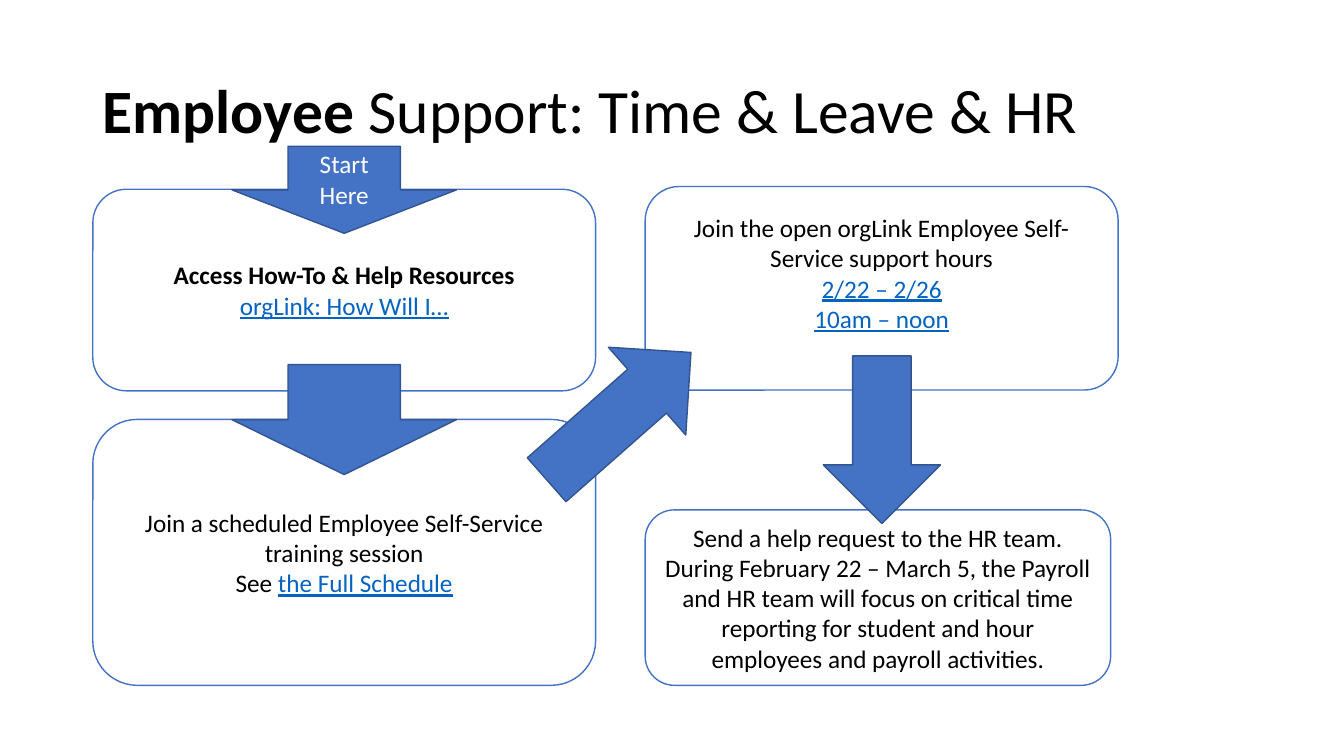
from pptx import Presentation
from pptx import util as u
from pptx.dml.color import RGBColor
from pptx.enum import shapes, text

COLORS = {"ink": "000000", "paper": "FFFFFF", "blue": "4472C4",
          "edge": "325491", "link": "0563C1"}
FONT = "Calibri"

# Each paragraph is a list of (words, style) runs.
TITLE = [[("Employee", "bold"), (" Support: Time & Leave & HR", "")]]
RESOURCES = [[("Access How-To & Help Resources", "bold")],
             [("orgLink: How Will I…", "link")]]
SUPPORT_HOURS = [[("Join the open orgLink Employee Self-Service support hours", "")],
                 [("2/22 – 2/26", "link")],
                 [("10am – noon", "link")]]
TRAINING = [[("Join a scheduled Employee Self-Service training session", "")],
            [("See ", ""), ("the Full Schedule", "link")]]
HELP_REQUEST = [[("Send a help request to the HR team.", "")],
                [("During February 22 – March 5, the Payroll and HR team will focus on "
                  "critical time reporting for student and hour employees and payroll "
                  "activities.", "")]]
START = [[("Start Here", "")]]

# Lengths in cm
LEFT, RIGHT = 2.34, 16.26
LEFT_WIDTH = 12.67
BOTTOM = 17.27
ARROW_WIDTH, NARROW_ARROW = 5.66, 2.95
LEFT_ARROW = LEFT + (LEFT_WIDTH - ARROW_WIDTH) / 2
TRAINING_TOP, HELP_TOP = 10.57, 12.85

# paragraphs, left, top, width, height, bottom inset
STEPS = [
    (RESOURCES, LEFT, 4.77, LEFT_WIDTH, 5.08, 0.13),
    (SUPPORT_HOURS, RIGHT, 4.7, 11.92, 5.13, 0.9),
    (TRAINING, LEFT, TRAINING_TOP, LEFT_WIDTH, BOTTOM - TRAINING_TOP, 0.13),
    (HELP_REQUEST, RIGHT, HELP_TOP, 11.73, BOTTOM - HELP_TOP, 0.13),
]
# paragraphs, left, top, width, height, rotation
ARROWS = [
    (START, LEFT_ARROW, 3.69, ARROW_WIDTH, 2.19, 0),
    ([], LEFT_ARROW, 9.19, ARROW_WIDTH, 2.77, 0),
    ([], 14.12, 8.06, NARROW_ARROW, 4.85, 228.6),
    ([], 20.75, 8.97, NARROW_ARROW, 4.22, 0),
]


def rgb(name):
    return RGBColor.from_string(COLORS[name])


def write(shape, paragraphs, *, size=18, color="ink",
          align=text.PP_ALIGN.CENTER, spacing=None, bottom=0.13):
    frame = shape.text_frame
    frame.word_wrap = True
    frame.vertical_anchor = text.MSO_ANCHOR.MIDDLE
    frame.margin_bottom = u.Cm(bottom)
    for index, runs in enumerate(paragraphs):
        paragraph = frame.add_paragraph() if index else frame.paragraphs[0]
        paragraph.alignment = align
        paragraph.line_spacing = spacing
        for words, style in runs:
            run = paragraph.add_run()
            run.text = words
            font = run.font
            font.name, font.size = FONT, u.Pt(size)
            font.bold = style == "bold"
            font.underline = style == "link"
            font.color.rgb = rgb("link" if style == "link" else color)


def add_block(slide, kind, box, fill, line):
    block = slide.shapes.add_shape(kind, *map(u.Cm, box))
    block.shadow.inherit = False
    block.fill.solid()
    block.fill.fore_color.rgb = rgb(fill)
    block.line.color.rgb = rgb(line)
    block.line.width = u.Pt(1)
    return block


def main():
    deck = Presentation()
    deck.slide_width, deck.slide_height = u.Cm(33.87), u.Cm(19.05)
    slide = deck.slides.add_slide(deck.slide_layouts[6])

    heading = slide.shapes.add_textbox(*map(u.Cm, (LEFT, 1.02, 29.21, 3.68)))
    write(heading, TITLE, size=44, align=text.PP_ALIGN.LEFT, spacing=0.9)

    for paragraphs, *box, bottom in STEPS:
        step = add_block(slide, shapes.MSO_SHAPE.ROUNDED_RECTANGLE, box, "paper", "blue")
        write(step, paragraphs, bottom=bottom)

    for paragraphs, *box, rotation in ARROWS:
        arrow = add_block(slide, shapes.MSO_SHAPE.DOWN_ARROW, box, "blue", "edge")
        arrow.rotation = rotation
        write(arrow, paragraphs, color="paper")

    deck.save("out.pptx")


if __name__ == "__main__":
    main()
